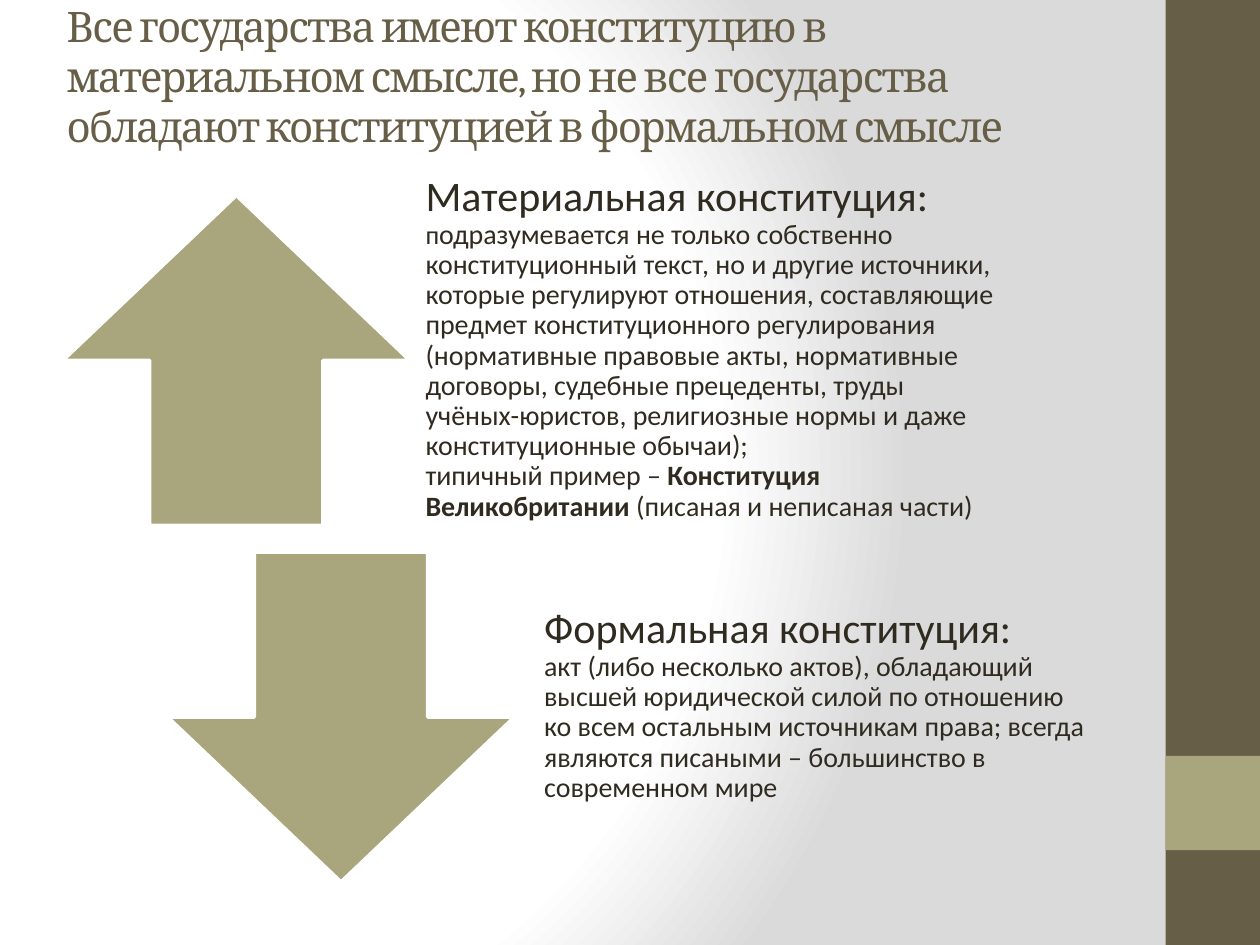
from lxml.etree import SubElement
from pptx import Presentation
from pptx.dml.color import RGBColor
from pptx.enum.shapes import MSO_SHAPE as Shape
from pptx.enum.text import MSO_ANCHOR as Anchor, MSO_AUTO_SIZE as AutoSize, PP_ALIGN as Align
from pptx.oxml.ns import qn
from pptx.util import Cm, Pt

# Content
TITLE = ("Все государства имеют конституцию в материальном смысле, "
         "но не все государства обладают конституцией в формальном смысле")
# Each run: text, size key, bold; "\v" is a line break
CONCEPTS = [
    dict(arrow=Shape.UP_ARROW, left=1.27, top=3.94, text_left=8.1, text_width=12.6, runs=[
        ("Материальная конституция:\v", "heading", False),
        ("п", "initial", False),
        ("одразумевается не только собственно конституционный текст, но и другие "
         "источники, которые регулируют отношения, составляющие предмет "
         "конституционного регулирования (нормативные правовые акты, нормативные "
         "договоры, судебные прецеденты, труды учёных-юристов, религиозные нормы "
         "и даже конституционные обычаи);\vтипичный пример – ", "body", False),
        ("Конституция Великобритании ", "body", True),
        ("(писаная и неписаная части)", "body", False),
    ]),
    dict(arrow=Shape.DOWN_ARROW, left=3.38, top=11.13, text_left=10.49, text_width=11.86, runs=[
        ("Формальная конституция:\v", "heading", False),
        ("акт (либо несколько актов), обладающий высшей юридической силой по "
         "отношению ко всем остальным источникам права; всегда являются писаными "
         "– большинство в современном мире", "body", False),
    ]),
]

THEME = dict(
    dark="675E47", accent="A9A57C", text="2F2B20", white="FFFFFF", shade="DADADA",
    title_font="Cambria", body_font="Calibri",
    title=24, heading=24, initial=15, body=16,
)
SLIDE_W, SLIDE_H = 25.4, 19.05
BAR_LEFT, BAR_W = 23.5, 1.9
ARROW_W, ARROW_H = 6.99, 6.65
INSET = 0.48


def color(key):
    return RGBColor.from_string(THEME[key])


def add_text(paragraph, text, size, font="body_font", ink="text", bold=False, spacing=None):
    """Append text to the paragraph, turning each "\v" into a line break."""
    for i, part in enumerate(text.split("\v")):
        if i:
            paragraph.add_line_break()
        if not part:
            continue
        run = paragraph.add_run()
        run.text = part
        run.font.name = THEME[font]
        run.font.size = Pt(THEME[size])
        run.font.bold = bold
        run.font.color.rgb = color(ink)
        if spacing is not None:
            run.font._element.set("spc", str(spacing))


def add_figure(slide, kind, left, top, width, height, fill, line=None):
    figure = slide.shapes.add_shape(kind, Cm(left), Cm(top), Cm(width), Cm(height))
    figure.shadow.inherit = False
    figure.fill.solid()
    figure.fill.fore_color.rgb = color(fill)
    if line:
        figure.line.color.rgb = color(line)
        figure.line.width = Pt(2)
    else:
        figure.line.fill.background()


def set_background(slide):
    """Radial gradient, white at the left and grey towards the right."""
    slide.background.fill.gradient()
    gradient = slide.background._cSld.find(".//" + qn("a:gradFill"))
    for child in list(gradient):
        gradient.remove(child)
    stops = SubElement(gradient, qn("a:gsLst"))
    for position, key in ((0, "white"), (75, "white"), (100, "shade")):
        stop = SubElement(stops, qn("a:gs"), pos=str(position * 1000))
        SubElement(stop, qn("a:srgbClr"), val=THEME[key])
    circle = SubElement(gradient, qn("a:path"), path="circle")
    SubElement(circle, qn("a:fillToRect"), l="20000", t="50000", r="100000", b="50000")


def main():
    prs = Presentation()
    prs.slide_width, prs.slide_height = Cm(SLIDE_W), Cm(SLIDE_H)
    slide = prs.slides.add_slide(prs.slide_layouts[5])
    set_background(slide)

    # Side bar with its accent block
    add_figure(slide, Shape.RECTANGLE, BAR_LEFT, 0, BAR_W, SLIDE_H, "dark")
    add_figure(slide, Shape.RECTANGLE, BAR_LEFT, 15.24, BAR_W, BAR_W, "accent")

    # Title
    title = slide.shapes.title
    title.left, title.top, title.width, title.height = Cm(1.09), Cm(0.33), Cm(21.16), Cm(2.39)
    frame = title.text_frame
    frame.word_wrap = True
    frame.auto_size = AutoSize.NONE
    frame.vertical_anchor = Anchor.MIDDLE
    heading = frame.paragraphs[0]
    heading.alignment = Align.LEFT
    add_text(heading, TITLE, "title", font="title_font", ink="dark", spacing=-100)

    # Arrows and their explanations
    for concept in CONCEPTS:
        add_figure(slide, concept["arrow"], concept["left"], concept["top"],
                   ARROW_W, ARROW_H, "accent", line="white")
        box = slide.shapes.add_textbox(Cm(concept["text_left"]), Cm(concept["top"]),
                                       Cm(concept["text_width"]), Cm(ARROW_H))
        frame = box.text_frame
        frame.word_wrap = True
        frame.vertical_anchor = Anchor.MIDDLE
        frame.margin_left = frame.margin_right = frame.margin_bottom = Cm(INSET)
        frame.margin_top = 0
        explanation = frame.paragraphs[0]
        explanation.line_spacing = 0.9
        for text, size, bold in concept["runs"]:
            add_text(explanation, text, size, bold=bold)

    prs.save("out.pptx")


if __name__ == "__main__":
    main()
